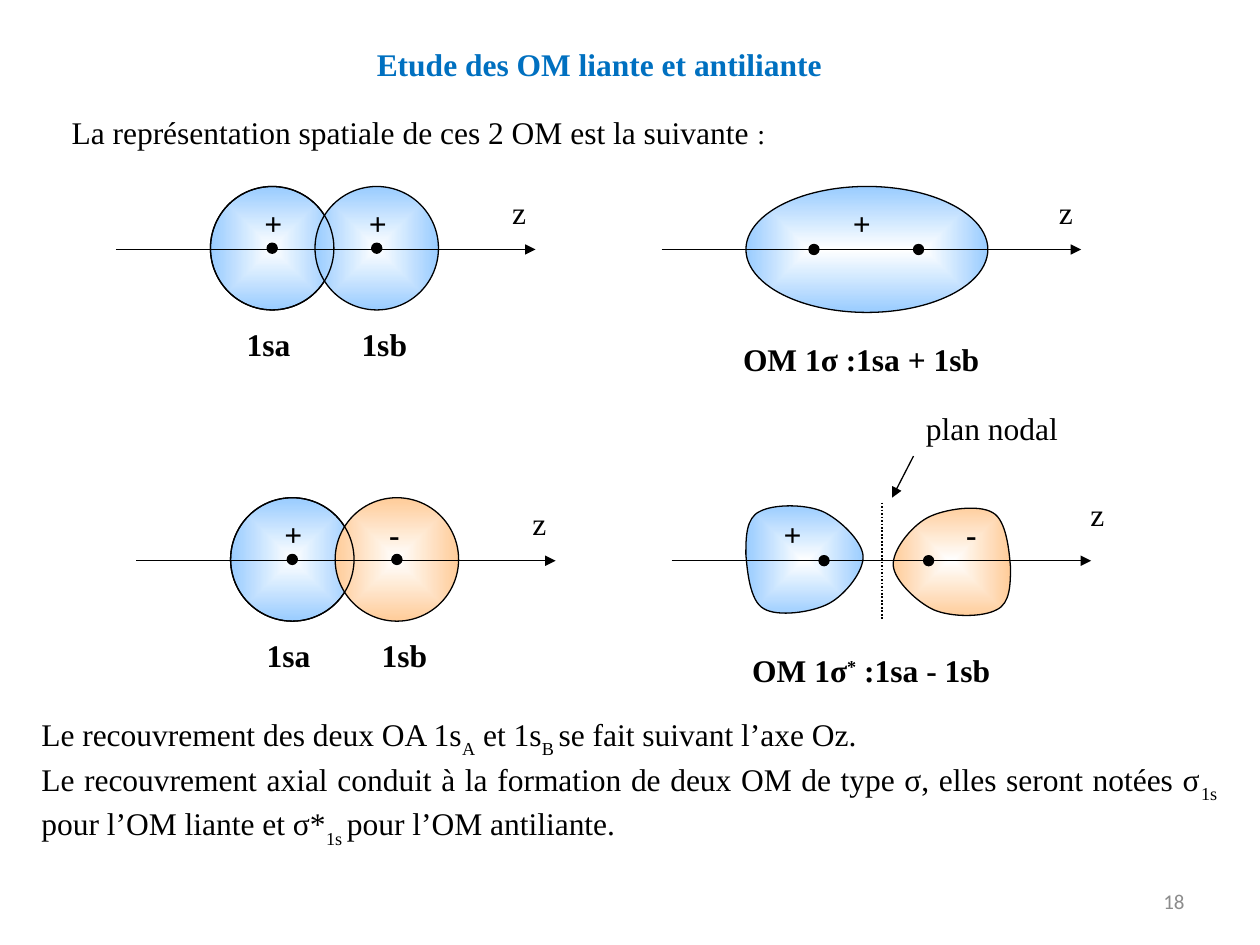
import dataclasses
import typing

import lxml.etree
import pptx
import pptx.dml.color
import pptx.enum.dml
import pptx.enum.shapes
import pptx.enum.text
import pptx.oxml
import pptx.oxml.ns
import pptx.util

Inches = pptx.util.Inches
Align = pptx.enum.text.PP_ALIGN
Anchor = pptx.enum.text.MSO_ANCHOR
qn = pptx.oxml.ns.qn


@dataclasses.dataclass(frozen=True)
class Theme:
    ink: str = "000000"
    title: str = "0070C0"
    blue: str = "99CCFF"
    peach: str = "FFCC99"
    core: str = "FFFFFF"
    grey: str = "8C8C8C"
    face: str = "Times New Roman"
    foot: str = "Calibri"
    body: float = 18
    colon: float = 16
    small: float = 12
    thin: float = 0.75
    dots: float = 1


class Box(typing.NamedTuple):
    x: float
    y: float
    w: float
    h: float


class Run(typing.NamedTuple):
    text: str
    base: int = 0
    size: float | None = None


@dataclasses.dataclass(frozen=True)
class Pair:
    x: float
    y: float
    sign: str
    tint: str


THEME = Theme()
SIDE = 0.98
DOT = 0.08
STEP = 0.83
SPAN = 3.33
ROW = 0.4

PAIRS = [Pair(1.67, 1.48, "+", THEME.blue), Pair(1.83, 3.95, "-", THEME.peach)]

LOBE = [
    (6.03, 4.06),
    (6.14, 4), (6.39, 4), (6.53, 4.06),
    (6.66, 4.12), (6.84, 4.29), (6.85, 4.41),
    (6.86, 4.53), (6.71, 4.72), (6.58, 4.79),
    (6.45, 4.86), (6.17, 4.9), (6.06, 4.83),
    (5.95, 4.77), (5.93, 4.52), (5.92, 4.4),
    (5.92, 4.27), (5.92, 4.11), (6.03, 4.06),
]
TURNED = [(13.94 - x, 8.9 - y) for x, y in LOBE]


def rgb(code: str):
    return pptx.dml.color.RGBColor.from_string(code)


def place(shape, box: Box) -> None:
    shape.left, shape.top, shape.width, shape.height = map(Inches, box)


def write(home, box: Box, *lines, shape=None, align=Align.LEFT, anchor=Anchor.TOP,
          bold=False, size=THEME.body, face=THEME.face, color=THEME.ink) -> None:
    shape = shape or home.add_textbox(0, 0, 0, 0)
    place(shape, box)
    frame = shape.text_frame
    frame.word_wrap = True
    frame.vertical_anchor = anchor
    frame.auto_size = pptx.enum.text.MSO_AUTO_SIZE.NONE
    for i, line in enumerate(lines):
        para = frame.add_paragraph() if i else frame.paragraphs[0]
        para.alignment = align
        for part in [Run(line)] if isinstance(line, str) else line:
            run = para.add_run()
            run.text = part.text
            font = run.font
            font.name = face
            font.size = pptx.util.Pt(part.size or size)
            font.bold = bold
            font.color.rgb = rgb(color)
            if part.base:
                run._r.get_or_add_rPr().set("baseline", str(part.base * 1000))


def glow(shape, tint: str, kind: str = "shape") -> None:
    shape.fill.gradient()
    old = shape._element.spPr.find(qn("a:gradFill"))
    new = pptx.oxml.parse_xml(
        f'<a:gradFill {pptx.oxml.ns.nsdecls("a")} rotWithShape="1"><a:gsLst>'
        f'<a:gs pos="0"><a:srgbClr val="{THEME.core}"/></a:gs>'
        f'<a:gs pos="100000"><a:srgbClr val="{tint}"/></a:gs></a:gsLst>'
        f'<a:path path="{kind}"><a:fillToRect l="50000" t="50000" r="50000" b="50000"/>'
        "</a:path></a:gradFill>")
    old.getparent().replace(old, new)


def edge(shape, width: float) -> None:
    shape.line.color.rgb = rgb(THEME.ink)
    shape.line.width = pptx.util.Pt(width)


def oval(home, box: Box, tint: str | None = None, width: float = 0):
    shape = home.add_shape(pptx.enum.shapes.MSO_SHAPE.OVAL, *map(Inches, box))
    shape.shadow.inherit = False
    edge(shape, width)
    if tint:
        glow(shape, tint)
    else:
        shape.fill.background()
    return shape


def dot(home, x: float, y: float) -> None:
    shape = oval(home, Box(x, y, DOT, DOT))
    shape.fill.solid()
    shape.fill.fore_color.rgb = rgb(THEME.ink)


def line(home, start: tuple, end: tuple, width: float = THEME.thin, head: bool = True):
    link = home.add_connector(pptx.enum.shapes.MSO_CONNECTOR.STRAIGHT,
                              *map(Inches, start + end))
    edge(link, width)
    lxml.etree.SubElement(link._element.spPr, qn("a:effectLst"))
    if head:
        lxml.etree.SubElement(link.line._get_or_add_ln(), qn("a:tailEnd"), type="triangle")
    return link


def axis(home, x: float, y: float) -> None:
    line(home, (x, y), (x + SPAN, y))


def lobe(home, points: list, tint: str) -> None:
    spots = [(Inches(x), Inches(y)) for x, y in points]
    pen = home.build_freeform(*spots[0])
    pen.add_line_segments(spots[1:], close=True)
    shape = pen.convert_to_shape()
    shape.shadow.inherit = False
    glow(shape, tint, "rect")
    edge(shape, THEME.thin)
    legs = list(shape._element.spPr.iter(qn("a:lnTo")))
    for i in range(0, len(legs), 3):
        curve = lxml.etree.Element(qn("a:cubicBezTo"))
        legs[i].addprevious(curve)
        for leg in legs[i:i + 3]:
            curve.append(leg[0])
            leg.getparent().remove(leg)


def draw_pair(home, pair: Pair) -> None:
    x, y = pair.x, pair.y
    for left, tint in ((x, THEME.blue), (x + STEP, pair.tint)):
        oval(home, Box(left, y, SIDE, SIDE), tint)
        dot(home, left + 0.45, y + 0.45)
    oval(home, Box(x, y, SIDE, SIDE))
    axis(home, x - 0.75, y + 0.5)
    for i, sign in enumerate(("+", pair.sign)):
        write(home, Box(x + 0.33 + i * STEP, y + 0.09, 0.33, ROW), sign, bold=True)
    for i, name in enumerate(("1sa", "1sb")):
        write(home, Box(x + 0.17 + i * 0.92, y + 1.05, 0.58, ROW), name,
              align=Align.CENTER, bold=True)
    write(home, Box(x + 2.16, y, 0.58, ROW), "z", align=Align.CENTER)


def draw_bond(home) -> None:
    write(home, Box(8.17, 1.48, 0.58, ROW), "z", align=Align.CENTER)
    write(home, Box(5.75, 2.65, 2.17, ROW), "OM 1σ :1sa + 1sb", align=Align.CENTER, bold=True)
    oval(home, Box(5.92, 1.48, 1.92, 1), THEME.blue, THEME.thin)
    for i in range(2):
        dot(home, 6.42 + i * STEP, 1.94)
    axis(home, 5.25, 1.98)
    write(home, Box(6.67, 1.57, 0.33, ROW), "+", bold=True)


def draw_anti(home) -> None:
    write(home, Box(5.83, 5.12, 2.17, ROW),
          [Run("OM 1σ"), Run("*", 30), Run(" :1sa - 1sb")], align=Align.CENTER, bold=True)
    write(home, Box(8.42, 3.88, 0.58, ROW), "z", align=Align.CENTER)
    lobe(home, LOBE, THEME.blue)
    lobe(home, TURNED, THEME.peach)
    for i in range(2):
        dot(home, 6.5 + i * STEP, 4.41)
    axis(home, 5.33, 4.45)
    plane = line(home, (7, 3.99), (7, 4.91), THEME.dots, head=False)
    plane.line.dash_style = pptx.enum.dml.MSO_LINE.ROUND_DOT
    write(home, Box(7.25, 3.2, 1.42, ROW), "plan nodal")
    line(home, (7.25, 3.62), (7.08, 3.95))
    for x, sign in ((6.08, "+"), (7.5, "-")):
        write(home, Box(x, 4.04, 0.42, 0.51), sign, align=Align.CENTER, bold=True)


def main() -> None:
    deck = pptx.Presentation()
    deck.slide_width, deck.slide_height = Inches(10), Inches(7.5)
    slide = deck.slides.add_slide(deck.slide_layouts[5])
    home = slide.shapes
    write(home, Box(2.89, 0.31, 4.23, ROW), "Etude des OM liante et antiliante",
          shape=home.title, bold=True, color=THEME.title)
    for pair in PAIRS:
        draw_pair(home.add_group_shape().shapes, pair)
    draw_bond(home.add_group_shape().shapes)
    draw_anti(home.add_group_shape().shapes)
    write(home, Box(0.47, 0.85, 6.33, ROW),
          [Run("La représentation spatiale de ces 2 OM est la suivante "),
           Run(":", size=THEME.colon)], anchor=Anchor.MIDDLE)
    write(home, Box(0.23, 5.7, 9.53, 1.01),
          [Run("Le recouvrement des deux OA 1s"), Run("A", -30), Run(" et 1s"),
           Run("B ", -30), Run("se fait suivant l’axe Oz.")],
          [Run("Le recouvrement axial conduit à la formation de deux OM de type σ, "
               "elles seront notées σ"), Run("1s", -30), Run(" pour l’OM liante et σ*"),
           Run("1s ", -30), Run("pour l’OM antiliante.")],
          align=Align.JUSTIFY, anchor=Anchor.MIDDLE)
    write(home, Box(7.17, 6.95, 2.33, ROW), "18", align=Align.RIGHT, anchor=Anchor.MIDDLE,
          size=THEME.small, face=THEME.foot, color=THEME.grey)
    deck.save("out.pptx")


if __name__ == "__main__":
    main()
